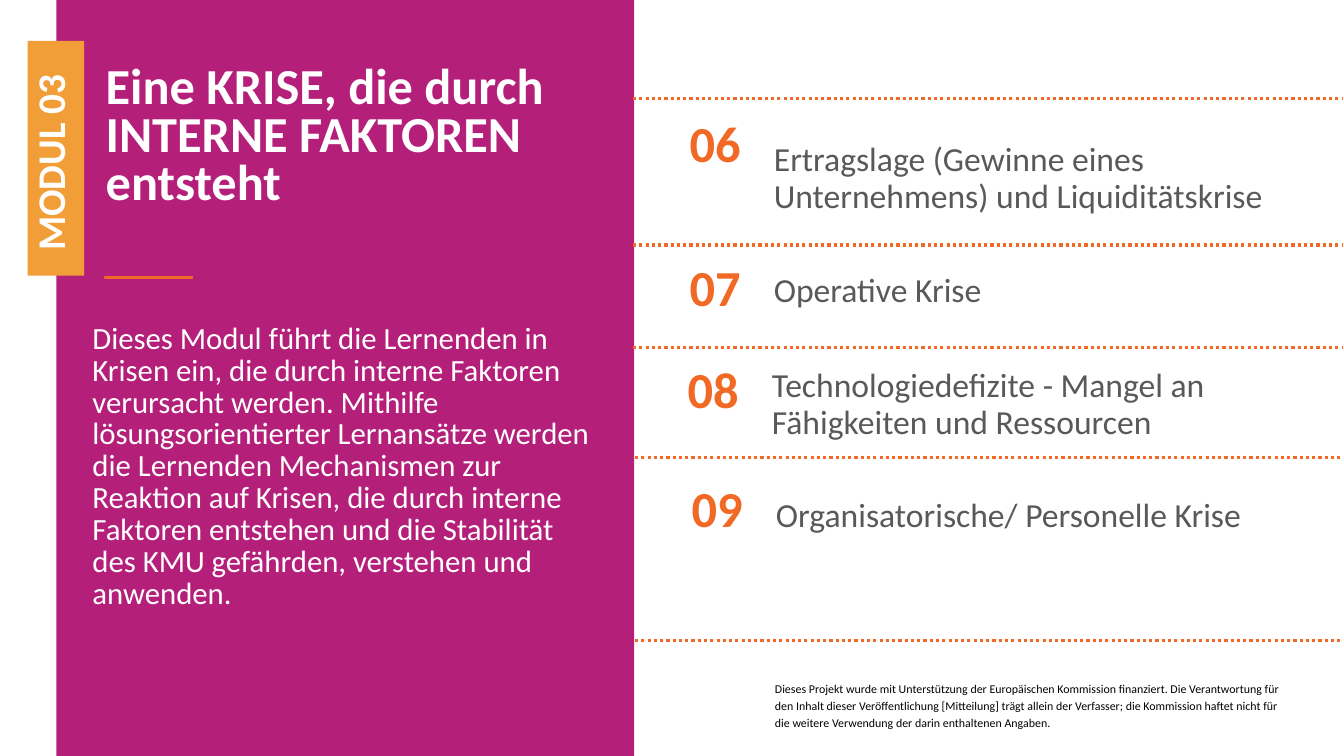
from pptx import Presentation
from pptx.dml.color import RGBColor
from pptx.enum.dml import MSO_LINE
from pptx.enum.shapes import MSO_CONNECTOR, MSO_SHAPE
from pptx.enum.text import MSO_ANCHOR as ANCHOR, PP_ALIGN as ALIGN
from pptx.oxml.ns import qn
from pptx.util import Pt
from lxml import etree

# Content
MODULE = "MODUL 03"
TITLE = "Eine KRISE, die durch INTERNE FAKTOREN entsteht"
INTRO = ("Dieses Modul führt die Lernenden in Krisen ein, die durch interne Faktoren "
         "verursacht werden. Mithilfe lösungsorientierter Lernansätze werden die "
         "Lernenden Mechanismen zur Reaktion auf Krisen, die durch interne Faktoren "
         "entstehen und die Stabilität des KMU gefährden, verstehen und anwenden.")
FUNDING = ("Dieses Projekt wurde mit Unterstützung der Europäischen Kommission finanziert. "
           "Die Verantwortung für den Inhalt dieser Veröffentlichung [Mitteilung] trägt "
           "allein der Verfasser; die Kommission haftet nicht für die weitere Verwendung "
           "der darin enthaltenen Angaben.")
# number, topic, left, top of number, top of topic, height of topic
TOPICS = [
    ("06", "Ertragslage (Gewinne eines Unternehmens) und Liquiditätskrise", 478, 79.9, 103, 49.7),
    ("07", "Operative Krise", 478, 182.2, 183.6, 49.7),
    ("08", "Technologiedefizite - Mangel an Fähigkeiten und Ressourcen", 476.6, 255.6, 257, 64.8),
    ("09", "Organisatorische/ Personelle Krise", 479.5, 340.6, 344.2, 49.7),
]
# left, y
DIVIDERS = [(452.2, 70.6), (452.2, 175), (452.2, 248.4), (453.6, 326.9), (453.6, 457.2)]
DIVIDER_W = 507
NUMBER_W, NUMBER_H = 65.5, 49.7
TOPIC_DX, TOPIC_W = 67.7, 374.4

FONT = "Calibri"
WHITE = RGBColor(0xFF, 0xFF, 0xFF)
BLACK = RGBColor(0, 0, 0)
GREY = RGBColor(0x59, 0x59, 0x59)
MAGENTA = RGBColor(0xB4, 0x1F, 0x7A)
ORANGE = RGBColor(0xF1, 0x69, 0x24)
AMBER = RGBColor(0xF2, 0x9E, 0x38)

prs = Presentation()
prs.slide_width, prs.slide_height = Pt(960), Pt(540)
s = prs.slides.add_slide(prs.slide_layouts[6])


def write(sp, text, size, color, bold=False, align=ALIGN.LEFT, anchor=ANCHOR.TOP, spacing=0.9):
    tf = sp.text_frame
    tf.word_wrap = True
    tf.vertical_anchor = anchor
    p = tf.paragraphs[0]
    p.alignment, p.line_spacing = align, spacing
    r = p.add_run()
    r.text = text
    f = r.font
    f.name, f.size, f.bold = FONT, Pt(size), bold
    f.color.rgb = color
    return p


def textbox(x, y, w, h, text, size, color, **fmt):
    write(s.shapes.add_textbox(Pt(x), Pt(y), Pt(w), Pt(h)), text, size, color, **fmt)


def rect(x, y, w, h, fill):
    sp = s.shapes.add_shape(MSO_SHAPE.RECTANGLE, Pt(x), Pt(y), Pt(w), Pt(h))
    sp.shadow.inherit = False
    sp.fill.solid()
    sp.fill.fore_color.rgb = fill
    sp.line.fill.background()
    return sp


def divider(x, y):
    c = s.shapes.add_connector(MSO_CONNECTOR.STRAIGHT, Pt(x), Pt(y), Pt(x + DIVIDER_W), Pt(y))
    c.line.color.rgb = ORANGE
    c.line.width = Pt(2.25)
    c.line.dash_style = MSO_LINE.ROUND_DOT
    etree.SubElement(c._element.spPr, qn("a:effectLst"))


# Left panel with title, accent and introduction
rect(40.3, 0, 412.6, 540, MAGENTA)
textbox(68.4, 43.2, 344.9, 119.5, TITLE, 36, WHITE, bold=True, spacing=0.8)
accent = rect(74.9, 197.3, 62.6, 1.4, ORANGE)
accent.line.color.rgb = ORANGE
accent.line.width = Pt(1)
textbox(59, 227.5, 374.4, 216, INTRO, 22, WHITE, spacing=Pt(22.8))

# Module tab, turned to read upwards
tab = rect(-43.9, 92.9, 167.8, 40.3, AMBER)
tab.rotation = 270
p = write(tab, MODULE, 28, WHITE, bold=True, anchor=ANCHOR.MIDDLE, spacing=Pt(24.4))
p._p.get_or_add_pPr().set("marL", str(Pt(10.8)))

# Numbered topics between dotted dividers
for x, y in DIVIDERS:
    divider(x, y)
for number, topic, x, number_y, topic_y, topic_h in TOPICS:
    textbox(x, number_y, NUMBER_W, NUMBER_H, number, 36, ORANGE, bold=True,
            align=ALIGN.CENTER, anchor=ANCHOR.MIDDLE)
    textbox(x + TOPIC_DX, topic_y, TOPIC_W, topic_h, topic, 24, GREY, anchor=ANCHOR.MIDDLE)

# Funding notice
textbox(546.5, 481, 374.4, 43.2, FUNDING, 8.5, BLACK, spacing=1.2)

prs.save("out.pptx")
